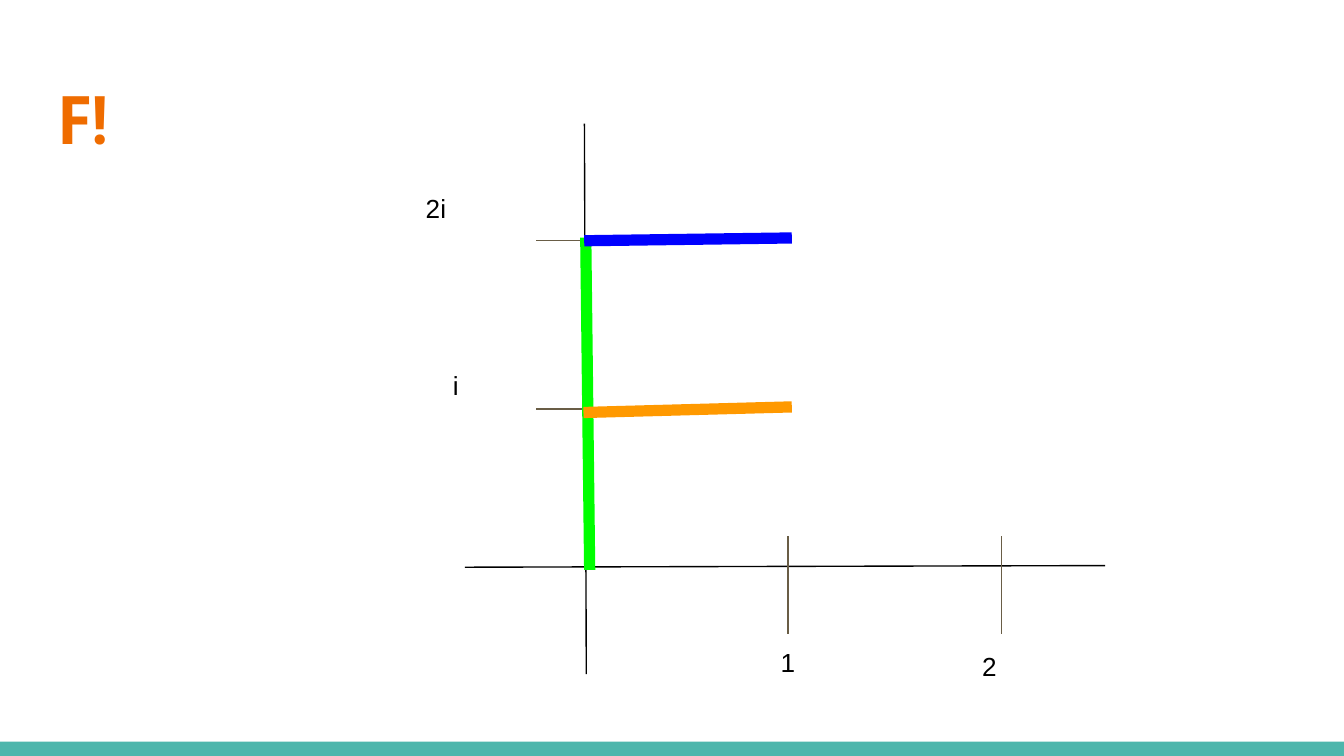
from lxml import etree
from pptx import Presentation
from pptx import util as u
from pptx.dml import color
from pptx.enum import shapes, text
from pptx.oxml import ns

BLACK, BROWN = "000000", "695D46"
THIN, THICK = 0.75, 6


def rgb(value):
    return color.RGBColor.from_string(value)


def add_bar(page, left, top, width, height, fill):
    bar = page.shapes.add_shape(
        shapes.MSO_SHAPE.RECTANGLE, u.Pt(left), u.Pt(top), u.Pt(width), u.Pt(height)
    )
    bar.shadow.inherit = False
    bar.fill.solid()
    bar.fill.fore_color.rgb = rgb(fill)
    bar.line.fill.background()


def add_line(page, start, end, stroke, weight):
    line = page.shapes.add_connector(
        shapes.MSO_CONNECTOR.STRAIGHT, *(u.Pt(value) for value in (*start, *end))
    )
    line.line.color.rgb = rgb(stroke)
    line.line.width = u.Pt(weight)
    etree.SubElement(line._element.spPr, ns.qn("a:effectLst"))


def add_text(page, words, place, size=14, font="Arial", fill=BLACK, bold=False,
             anchor=text.MSO_ANCHOR.TOP):
    box = page.shapes.add_textbox(*(u.Pt(value) for value in place))
    frame = box.text_frame
    frame.word_wrap = True
    frame.vertical_anchor = anchor
    frame.margin_left = frame.margin_right = u.Pt(7.2)
    frame.margin_top = frame.margin_bottom = u.Pt(7.2)
    para = frame.paragraphs[0]
    para.text = words
    para.font.size = u.Pt(size)
    para.font.name = font
    para.font.bold = bold
    para.font.color.rgb = rgb(fill)


def add_axes(page):
    add_line(page, (313.1, 66.2), (314.1, 361.2), BLACK, THIN)
    add_line(page, (592, 303), (249, 303.9), BLACK, THIN)
    for x in (422.1, 536.5):
        add_line(page, (x, 287.2), (x, 339.6), BROWN, THIN)
    for y in (219.2, 128.9):
        add_line(page, (334, y), (287.3, y), BROWN, THIN)


def add_letter(page):
    strokes = [
        ((313.8, 127.3), (315.9, 305.3), "00FF00"),
        ((313, 129), (424.2, 127.5), "0000FF"),
        ((312.6, 221), (424.2, 218), "FF9900"),
    ]
    for start, end, stroke in strokes:
        add_line(page, start, end, stroke, THICK)


def main():
    deck = Presentation()
    deck.slide_width, deck.slide_height = u.Pt(720), u.Pt(405)
    page = deck.slides.add_slide(deck.slide_layouts[6])
    add_bar(page, 0, 397.3, 720, 7.7, "4DB6AC")
    add_text(page, "F!", (24.5, 35.5, 671, 55.4), 36, "Roboto Condensed", "EF6C00",
             True, text.MSO_ANCHOR.MIDDLE)
    add_axes(page)
    labels = [
        ("2i", (221, 95.8, 56.2, 59.8)),
        ("i", (235.5, 190.8, 38.9, 35.3)),
        ("1", (411.1, 340.6, 32.4, 13)),
        ("2", (519.1, 341, 32.4, 35.3)),
    ]
    for words, place in labels:
        add_text(page, words, place)
    add_letter(page)
    deck.save("out.pptx")


if __name__ == "__main__":
    main()
